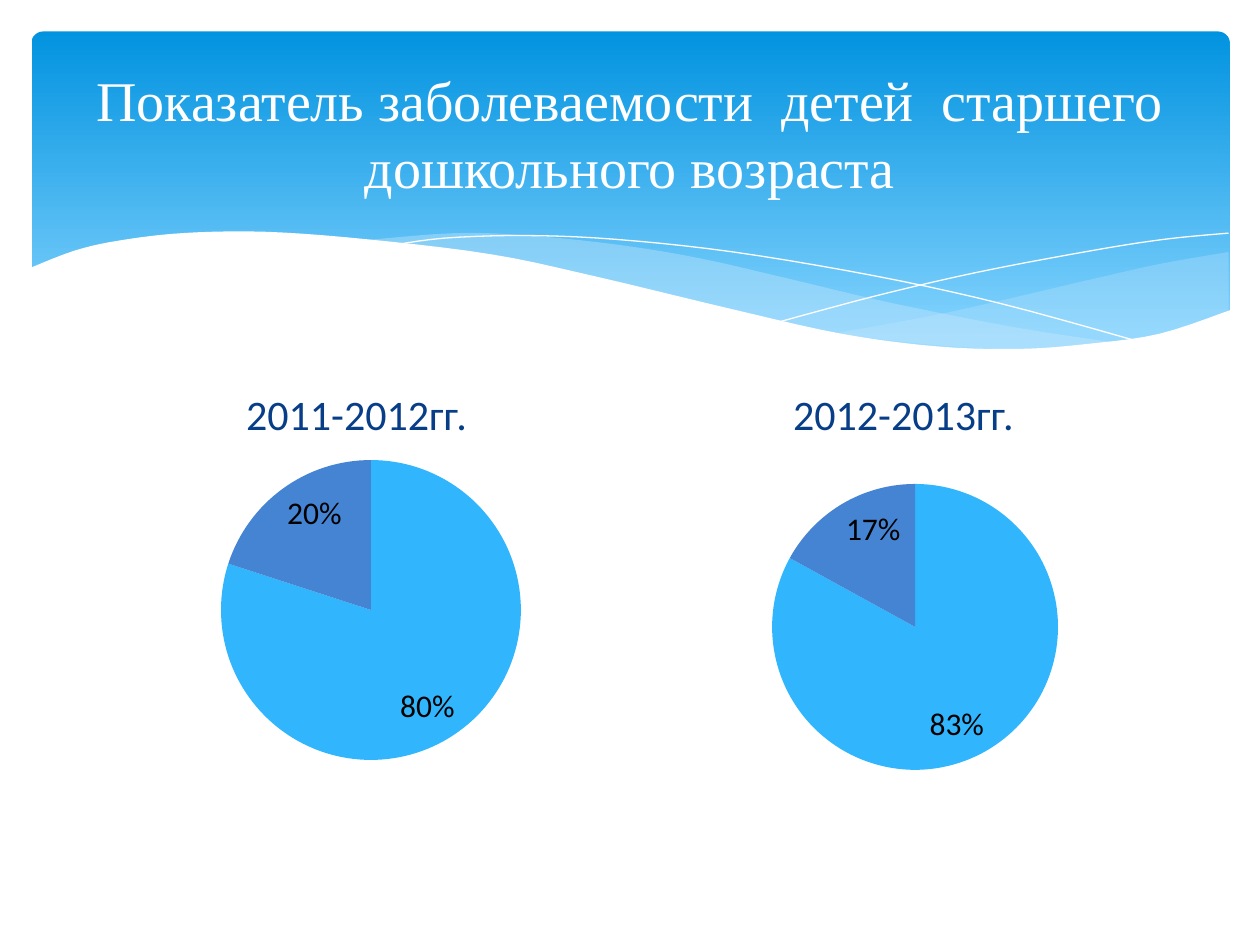
from lxml.etree import SubElement
from pptx import Presentation
from pptx.chart.data import CategoryChartData
from pptx.dml.color import RGBColor
from pptx.enum.chart import XL_CHART_TYPE, XL_LABEL_POSITION
from pptx.enum.shapes import MSO_SHAPE
from pptx.enum.text import MSO_ANCHOR, PP_ALIGN
from pptx.oxml.ns import qn
from pptx.util import Pt

WHITE = RGBColor(0xFF, 0xFF, 0xFF)
BLACK = RGBColor(0x00, 0x00, 0x00)
BANNER_TOP = RGBColor(0x02, 0x93, 0xE0)
BANNER_BOTTOM = RGBColor(0x83, 0xD3, 0xFE)
WAVE = RGBColor(0xC6, 0xE7, 0xFC)
NAVY = RGBColor(0x07, 0x3E, 0x87)
SLICES = [RGBColor(0x31, 0xB6, 0xFD), RGBColor(0x45, 0x84, 0xD3),
          RGBColor(0x5B, 0xD0, 0x78), RGBColor(0xA5, 0xD0, 0x28)]

# Wave edges, as points that a smooth curve passes through
RIGHT_WAVE = [
    [(702, 144), (662, 151), (620, 160.5), (542, 178.5), (476, 190.8)],
    [(476, 190.8), (527, 196.6), (570, 199.5), (601, 199.5), (640, 196.5),
     (673, 188.6), (702, 177.8)]]
MIDDLE_WAVE = [
    [(643, 196.6), (581, 187.2), (508, 172.8), (453, 159.8), (400, 147.6),
     (352, 139.7), (302, 134.6), (260, 133.2), (206, 137.5)],
    [(206, 137.5), (246, 143.3), (307, 155.5), (382, 172.8), (456, 187.9),
     (510, 195.8), (565, 199.9), (617, 199.4), (643, 196.6)]]
FALLING_LINE = [(222.5, 140.4), (254, 136.1), (300, 134.6), (352, 136.8),
                (419, 144), (500, 157.7), (572, 173.5), (653, 195.8)]
RISING_LINE = [(441.4, 185), (500, 169.2), (559, 155.5), (623.5, 143.3),
               (665, 136.8), (702, 133.2)]
WHITE_WAVE = [
    [(703.4, 177.1), (662.4, 190.8), (621, 196.6), (582.5, 199.4), (535.7, 198),
     (481, 190.8), (417, 176.4), (342, 158.4), (281, 145.4), (210, 136.8),
     (152, 132.5), (105, 133.2), (68, 137.5), (42.5, 143.3), (16.6, 153.4)],
    [(16.6, 236.9), (703.4, 236.9)]]


def smooth(knots, steps=5):
    """Catmull-Rom curve through the knots."""
    if len(knots) < 3:
        return knots
    padded = [knots[0], *knots, knots[-1]]
    curve = [knots[0]]
    for a, b, c, d in zip(padded, padded[1:], padded[2:], padded[3:]):
        for step in range(1, steps + 1):
            t = step / steps
            curve.append(tuple(
                q + t / 2 * (r - p + t * (2 * p - 5 * q + 4 * r - s
                                          + t * (3 * (q - r) + s - p)))
                for p, q, r, s in zip(a, b, c, d)))
    return curve


class SlideBuilder:
    title_font = "Times New Roman"
    body_font = "Calibri"

    def __init__(self, prs):
        self.slide = prs.slides.add_slide(prs.slide_layouts[5])
        self.shapes = self.slide.shapes

    def banner(self, left, top, width, height):
        banner = self.shapes.add_shape(MSO_SHAPE.ROUNDED_RECTANGLE, Pt(left),
                                       Pt(top), Pt(width), Pt(height))
        banner.adjustments[0] = 0.034
        banner.shadow.inherit = False
        banner.line.fill.background()
        banner.fill.gradient()
        banner.fill.gradient_angle = 270
        stops = banner.fill.gradient_stops
        for stop, place, color in zip(stops, (0, 0.9), (BANNER_TOP, BANNER_BOTTOM)):
            stop.position = place
            stop.color.rgb = color

    def outline(self, curve, closed):
        points = [(Pt(x), Pt(y)) for x, y in curve]
        builder = self.shapes.build_freeform(*points[0])
        builder.add_line_segments(points[1:], close=closed)
        outline = builder.convert_to_shape()
        outline.shadow.inherit = False
        return outline

    def wave(self, edges, color, opacity=100):
        wave = self.outline([p for edge in edges for p in smooth(edge)], True)
        wave.line.fill.background()
        wave.fill.solid()
        wave.fill.fore_color.rgb = color
        if opacity < 100:
            srgb = wave.element.find(".//" + qn("a:srgbClr"))
            SubElement(srgb, qn("a:alpha"), val=str(opacity * 1000))

    def wave_line(self, knots):
        line = self.outline(smooth(knots), False)
        line.fill.background()
        line.line.color.rgb = WHITE
        line.line.width = Pt(0)

    def put_text(self, holder, text, font, size, color):
        frame = holder.text_frame
        frame.word_wrap = True
        frame.vertical_anchor = MSO_ANCHOR.MIDDLE
        paragraph = frame.paragraphs[0]
        paragraph.alignment = PP_ALIGN.CENTER
        run = paragraph.add_run()
        run.text = text
        run.font.name = font
        run.font.size = Pt(size)
        run.font.color.rgb = color

    def title(self, text, left, top, width, height):
        title = self.shapes.title
        title.left, title.top = Pt(left), Pt(top)
        title.width, title.height = Pt(width), Pt(height)
        self.put_text(title, text, self.title_font, 32, WHITE)
        # Bring the title in front of the banner
        title.element.getparent().append(title.element)

    def heading(self, text, left, top, width, height):
        heading = self.shapes.add_textbox(Pt(left), Pt(top), Pt(width), Pt(height))
        self.put_text(heading, text, self.body_font, 24, NAVY)

    def pie(self, values, left, top, width, height, center, radius):
        data = CategoryChartData()
        data.categories = ["1", "2", "3", "4"]
        data.add_series("Series 1", values)
        chart = self.shapes.add_chart(XL_CHART_TYPE.PIE, Pt(left), Pt(top),
                                      Pt(width), Pt(height), data).chart
        chart.has_legend = False
        chart.has_title = False
        chart.font.name = self.body_font
        chart.font.size = Pt(18)
        chart.font.color.rgb = BLACK

        plot = chart.plots[0]
        plot.vary_by_categories = True
        for index, color in enumerate(SLICES):
            fill = plot.series[0].points[index].format.fill
            fill.solid()
            fill.fore_color.rgb = color
        plot.has_data_labels = True
        labels = plot.data_labels
        labels.show_percentage = True
        labels.show_value = False
        labels.number_format = "0%"
        labels.number_format_is_linked = False
        labels.position = XL_LABEL_POSITION.INSIDE_END

        # Place the pie inside the chart frame
        area = chart.element.find(".//" + qn("c:plotArea"))
        layout = area.find(qn("c:layout"))
        if layout is None:
            layout = SubElement(area, qn("c:layout"))
            area.insert(0, layout)
        manual = SubElement(layout, qn("c:manualLayout"))
        for tag, value in (("layoutTarget", "inner"), ("xMode", "edge"),
                           ("yMode", "edge"),
                           ("x", (center[0] - radius - left) / width),
                           ("y", (center[1] - radius - top) / height),
                           ("w", 2 * radius / width), ("h", 2 * radius / height)):
            SubElement(manual, qn("c:" + tag), val=str(value))


def main():
    prs = Presentation()
    prs.slide_width, prs.slide_height = Pt(720), Pt(540)
    page = SlideBuilder(prs)

    # Banner with waves
    page.banner(18, 18, 684.7, 194.4)
    page.wave(RIGHT_WAVE, WAVE, 29)
    page.wave(MIDDLE_WAVE, WAVE, 40)
    page.wave_line(FALLING_LINE)
    page.wave_line(RISING_LINE)
    page.wave(WHITE_WAVE, WHITE)

    page.title("Показатель заболеваемости  детей  старшего дошкольного возраста",
               36, 26.6, 648, 98.6)

    # One heading and pie for each school year
    years = [("2011-2012гг.", (80, 20, None, None), 53.3, 236.2, 208, (212, 348.6), 85.7),
             ("2012-2013гг.", (83, 17, None, None), 365.8, 247.7, 202.3, (522.9, 358.3), 81.7)]
    for year, values, left, top, height, center, radius in years:
        page.heading(year, left, 211, 301, 50.4)
        page.pie(values, left, top, 301, height, center, radius)

    prs.save("out.pptx")


if __name__ == "__main__":
    main()
